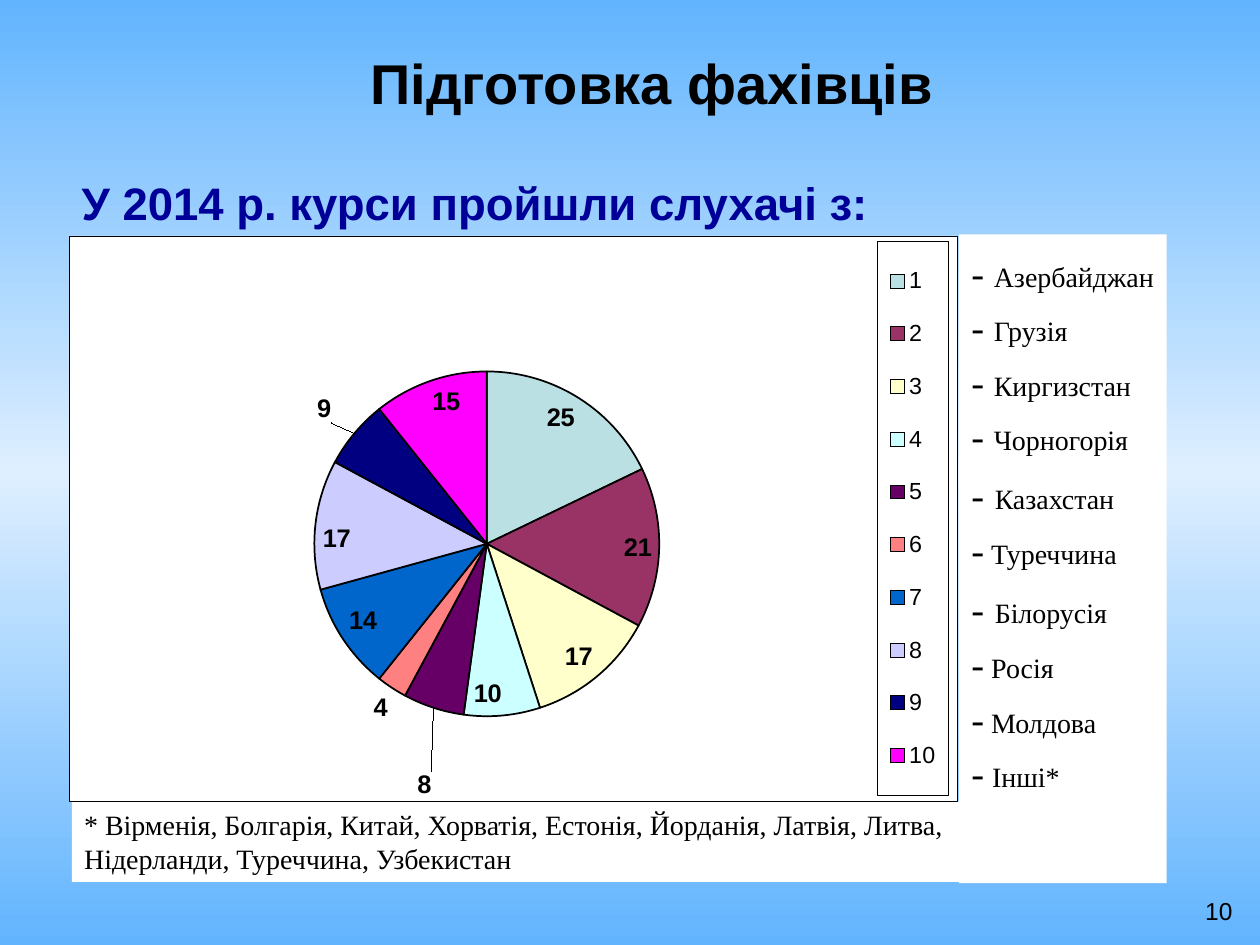
"""Builds a slide with a pie chart of course participants by country in 2014."""
from lxml import etree
from pptx import Presentation
from pptx.chart.data import CategoryChartData
from pptx.dml.color import RGBColor
from pptx.enum.chart import XL_CHART_TYPE, XL_LABEL_POSITION as LabelPosition, XL_LEGEND_POSITION
from pptx.enum.text import MSO_ANCHOR, MSO_AUTO_SIZE, PP_ALIGN
from pptx.oxml import parse_xml
from pptx.oxml.ns import nsdecls, qn
from pptx.util import Inches, Pt

BLACK = RGBColor(0x00, 0x00, 0x00)
WHITE = RGBColor(0xFF, 0xFF, 0xFF)
NAVY = RGBColor(0x00, 0x00, 0x99)
SKY = RGBColor(0x62, 0xB4, 0xFE)
PALE = RGBColor(0xDE, 0xEF, 0xFF)
SLICE_COLORS = [RGBColor.from_string(code) for code in (
    "BBE0E3", "993366", "FFFFCC", "CCFFFF", "660066",
    "FF8080", "0066CC", "CCCCFF", "000080", "FF00FF")]
PARTICIPANTS = (25, 21, 17, 10, 8, 4, 14, 17, 9, 15)
COUNTRIES = (
    ("Азербайджан", 22), ("Грузія", 22), ("Киргизстан", 22), ("Чорногорія", 22),
    ("Казахстан", 24), ("Туреччина", 16), ("Білорусія", 24), ("Росія", 16),
    ("Молдова", 16), ("Інші*", 18))
SERIF = "Times New Roman"


def add_run(paragraph, text, size, font="Arial", color=BLACK, bold=False):
    run = paragraph.add_run()
    run.text = text
    run.font.size = Pt(size)
    run.font.name = font
    run.font.color.rgb = color
    run.font.bold = bold


def add_layout(previous, **settings):
    layout = etree.Element(qn("c:layout"))
    manual = etree.SubElement(layout, qn("c:manualLayout"))
    for name, value in settings.items():
        etree.SubElement(manual, qn(f"c:{name}")).set("val", str(value))
    previous.addnext(layout)


presentation = Presentation()
presentation.slide_width = Inches(10)
presentation.slide_height = Inches(7.5)
slide = presentation.slides.add_slide(presentation.slide_layouts[1])

background = slide.background.fill
background.gradient()
background.gradient_angle = 90
stops = background.gradient_stops
stops[0].color.rgb, stops[0].position = SKY, 0
stops[1].color.rgb, stops[1].position = SKY, 1
middle_stop = parse_xml(
    f'<a:gs {nsdecls("a")} pos="50000"><a:srgbClr val="{PALE}"/></a:gs>')
slide.background._cSld.find(".//" + qn("a:gs")).addnext(middle_stop)

title, countries = slide.placeholders
title.left, title.top, title.width, title.height = (
    Inches(0.35), Inches(0.16), Inches(9.65), Inches(0.98))
title.text_frame.vertical_anchor = MSO_ANCHOR.MIDDLE
title.text_frame.paragraphs[0].alignment = PP_ALIGN.CENTER
add_run(title.text_frame.paragraphs[0], "Підготовка фахівців", 32, bold=True)

countries.left, countries.top, countries.width, countries.height = (
    Inches(7.61), Inches(1.86), Inches(1.65), Inches(5.15))
countries.fill.solid()
countries.fill.fore_color.rgb = WHITE
frame = countries.text_frame
frame.auto_size = MSO_AUTO_SIZE.NONE
frame.margin_right = 0
for index, (country, gap_size) in enumerate(COUNTRIES):
    paragraph = frame.add_paragraph() if index else frame.paragraphs[0]
    paragraph.line_spacing = 1.18
    paragraph.space_before = Pt(0)
    properties = paragraph._p.get_or_add_pPr()
    properties.set("marL", "0")
    properties.set("indent", "0")
    etree.SubElement(properties, qn("a:buNone"))
    add_run(paragraph, "-", 22, SERIF)
    add_run(paragraph, " ", gap_size, SERIF)
    add_run(paragraph, country, 16, SERIF)

subtitle = slide.shapes.add_textbox(Inches(0.55), Inches(1.34), Inches(9.65), Inches(0.54))
subtitle.text_frame.word_wrap = True
add_run(subtitle.text_frame.paragraphs[0], "У 2014 р. курси пройшли слухачі з:", 26,
        color=NAVY, bold=True)

footnote = slide.shapes.add_textbox(Inches(0.57), Inches(6.36), Inches(7.07), Inches(0.64))
footnote.fill.solid()
footnote.fill.fore_color.rgb = WHITE
footnote.text_frame.word_wrap = True
add_run(footnote.text_frame.paragraphs[0],
        "* Вірменія, Болгарія, Китай, Хорватія, Естонія, Йорданія, Латвія, Литва, "
        "Нідерланди, Туреччина, Узбекистан", 16, SERIF)

slide_number = slide.shapes.add_textbox(Inches(7.55), Inches(7.06), Inches(2.33), Inches(0.39))
slide_number.text_frame.word_wrap = True
slide_number.text_frame.paragraphs[0].alignment = PP_ALIGN.RIGHT
add_run(slide_number.text_frame.paragraphs[0], "10", 14)

chart_data = CategoryChartData()
chart_data.categories = [str(number) for number in range(1, len(PARTICIPANTS) + 1)]
chart_data.add_series("Series 1", PARTICIPANTS)
chart = slide.shapes.add_chart(
    XL_CHART_TYPE.PIE, Inches(0.55), Inches(1.87), Inches(7.05), Inches(4.49), chart_data).chart
chart.has_title = False
chart.font.size = Pt(14.5)
chart.font.name = "Arial"
chart.font.color.rgb = BLACK
frame_style = parse_xml(
    f'<c:spPr {nsdecls("c", "a")}><a:solidFill><a:srgbClr val="{WHITE}"/></a:solidFill>'
    f'<a:ln w="3175"><a:solidFill><a:srgbClr val="{BLACK}"/></a:solidFill></a:ln></c:spPr>')
chart_element = chart._chartSpace.find(qn("c:chart"))
chart_element.addnext(frame_style)

plot = chart.plots[0]
plot.vary_by_categories = True
plot_area = chart_element.find(qn("c:plotArea"))
for layout in plot_area.findall(qn("c:layout")):
    plot_area.remove(layout)
marker = etree.Element("marker")
plot_area.insert(0, marker)
add_layout(marker, layoutTarget="inner", xMode="edge", yMode="edge",
           x=0.12, y=0.24, w=0.7, h=0.61)
plot_area.remove(marker)

series = plot.series[0]
labels = series.data_labels
labels.show_value = True
labels.position = LabelPosition.INSIDE_END
labels.font.size = Pt(14.5)
labels.font.name = "Arial"
labels.font.bold = True
labels.font.color.rgb = BLACK
for index, color in enumerate(SLICE_COLORS):
    slice_format = series.points[index].format
    slice_format.fill.solid()
    slice_format.fill.fore_color.rgb = color
    slice_format.line.color.rgb = BLACK
    slice_format.line.width = Pt(1)

for index, shift_x, shift_y in ((4, 0, 0.1), (5, 0, 0), (8, -0.02, -0.01)):
    label = series.points[index].data_label
    label.font.size = Pt(14.5)
    label.font.name = "Arial"
    label.font.bold = True
    label.font.color.rgb = BLACK
    label.position = LabelPosition.OUTSIDE_END
    if shift_x or shift_y:
        add_layout(label._dLbl.find(qn("c:idx")), x=shift_x, y=shift_y)

chart.has_legend = True
legend = chart.legend
legend.position = XL_LEGEND_POSITION.RIGHT
legend.include_in_layout = False
legend.font.size = Pt(13.3)
legend.font.name = "Arial"
legend.font.color.rgb = BLACK
legend_position = legend._element.find(qn("c:legendPos"))
for layout in legend._element.findall(qn("c:layout")):
    legend._element.remove(layout)
add_layout(legend_position, xMode="edge", yMode="edge", x=0.91, y=0.01, w=0.08, h=0.98)
legend_style = parse_xml(
    f'<c:spPr {nsdecls("c", "a")}><a:ln w="3175"><a:solidFill>'
    f'<a:srgbClr val="{BLACK}"/></a:solidFill></a:ln></c:spPr>')
legend._element.find(qn("c:overlay")).addnext(legend_style)

presentation.save("out.pptx")
